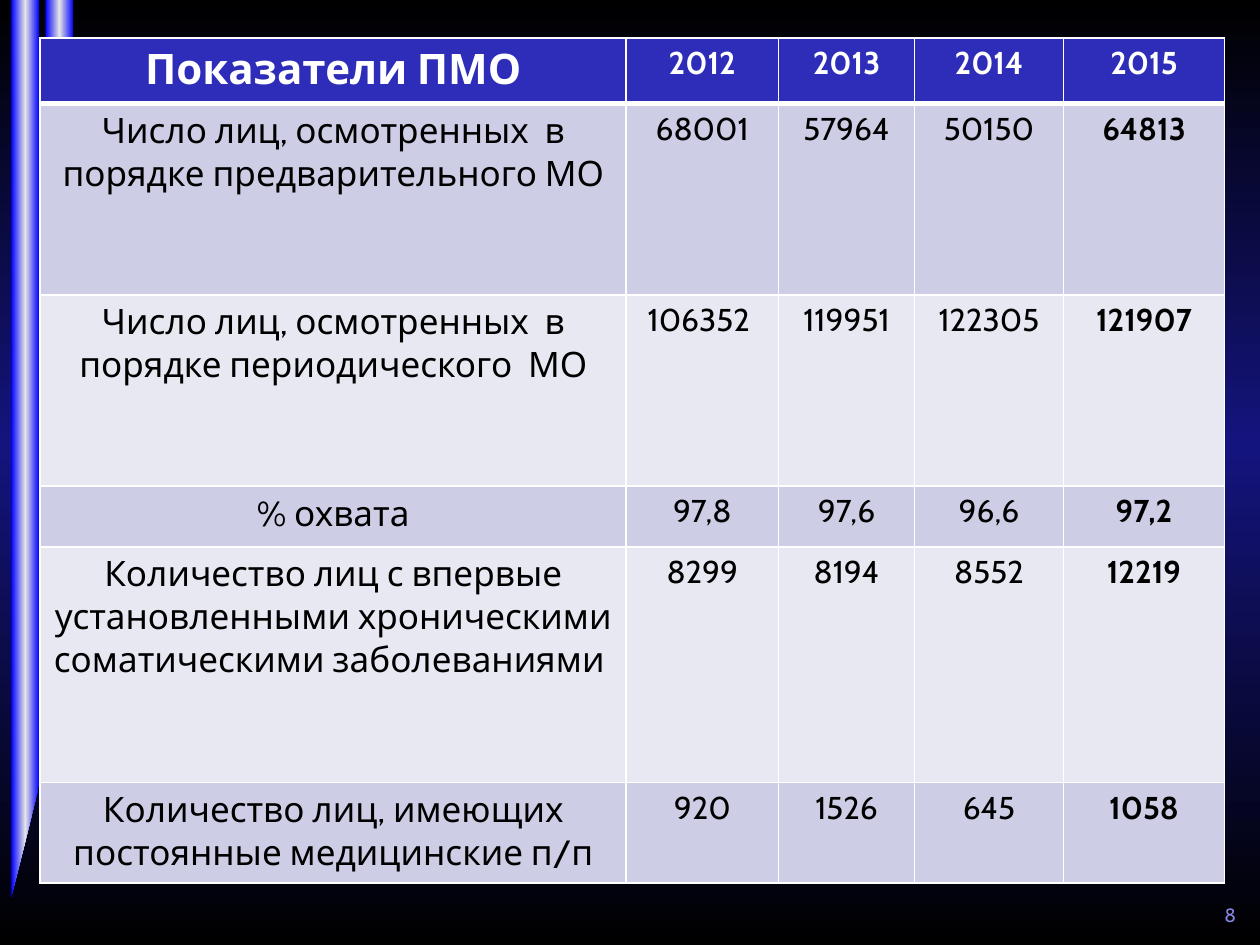
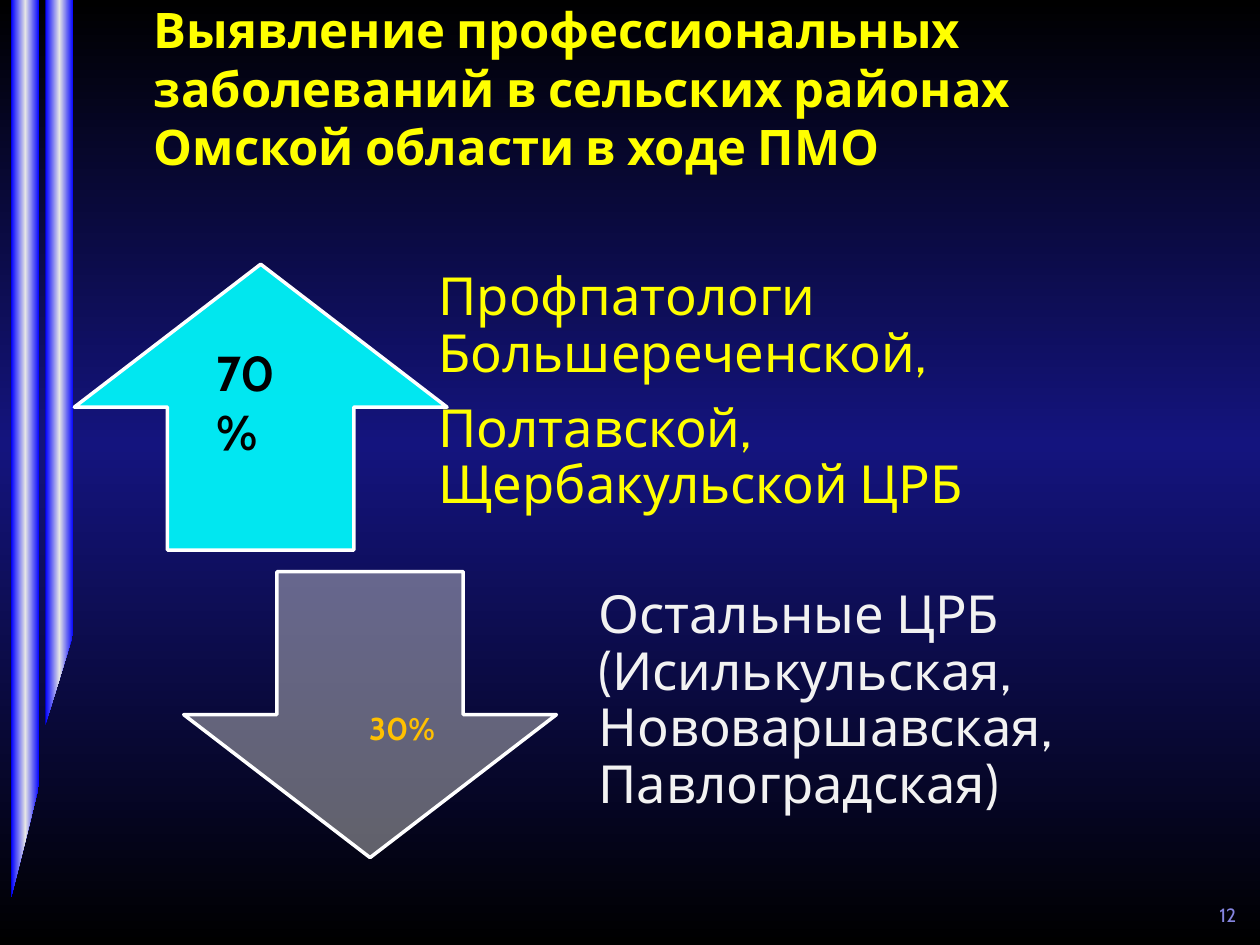
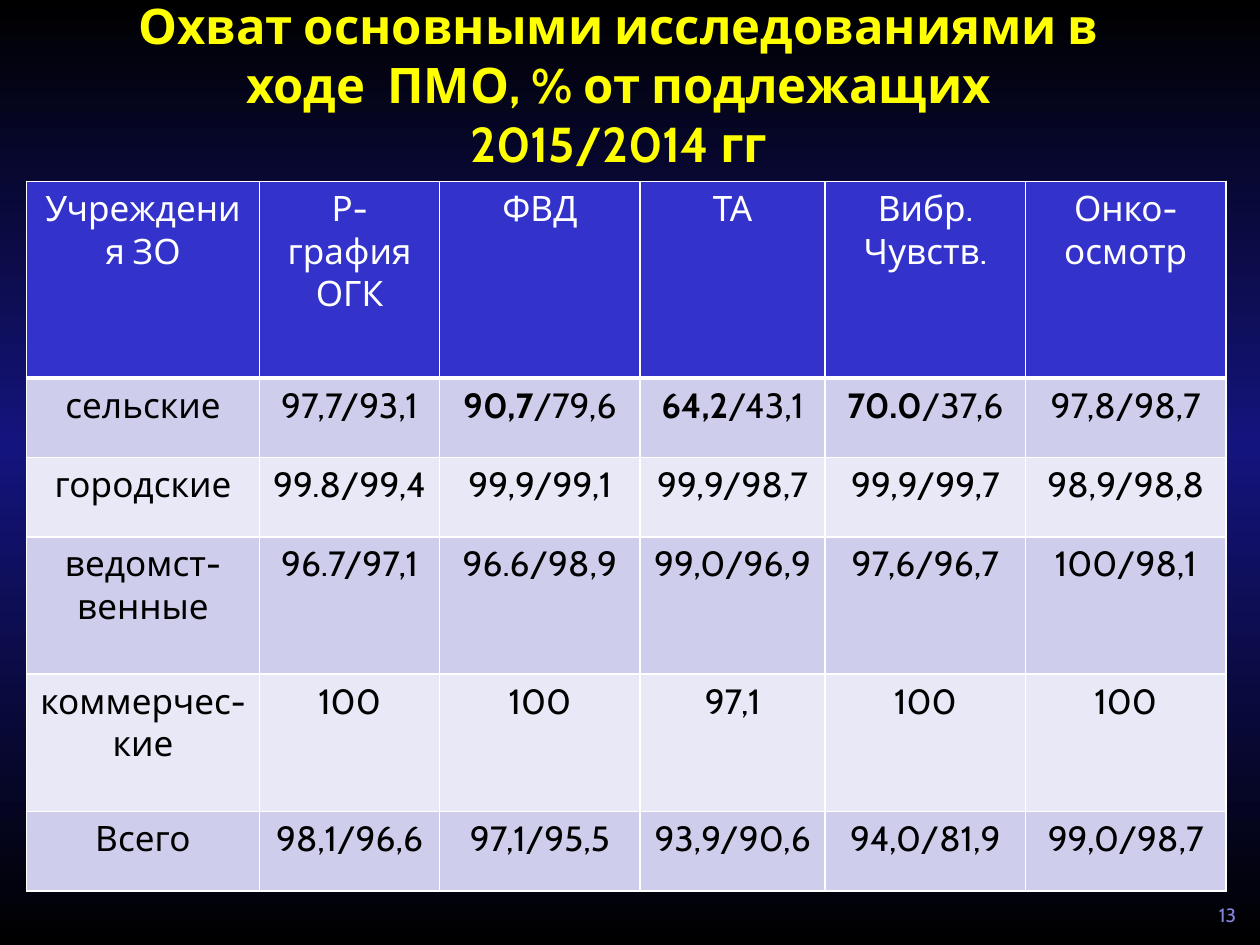
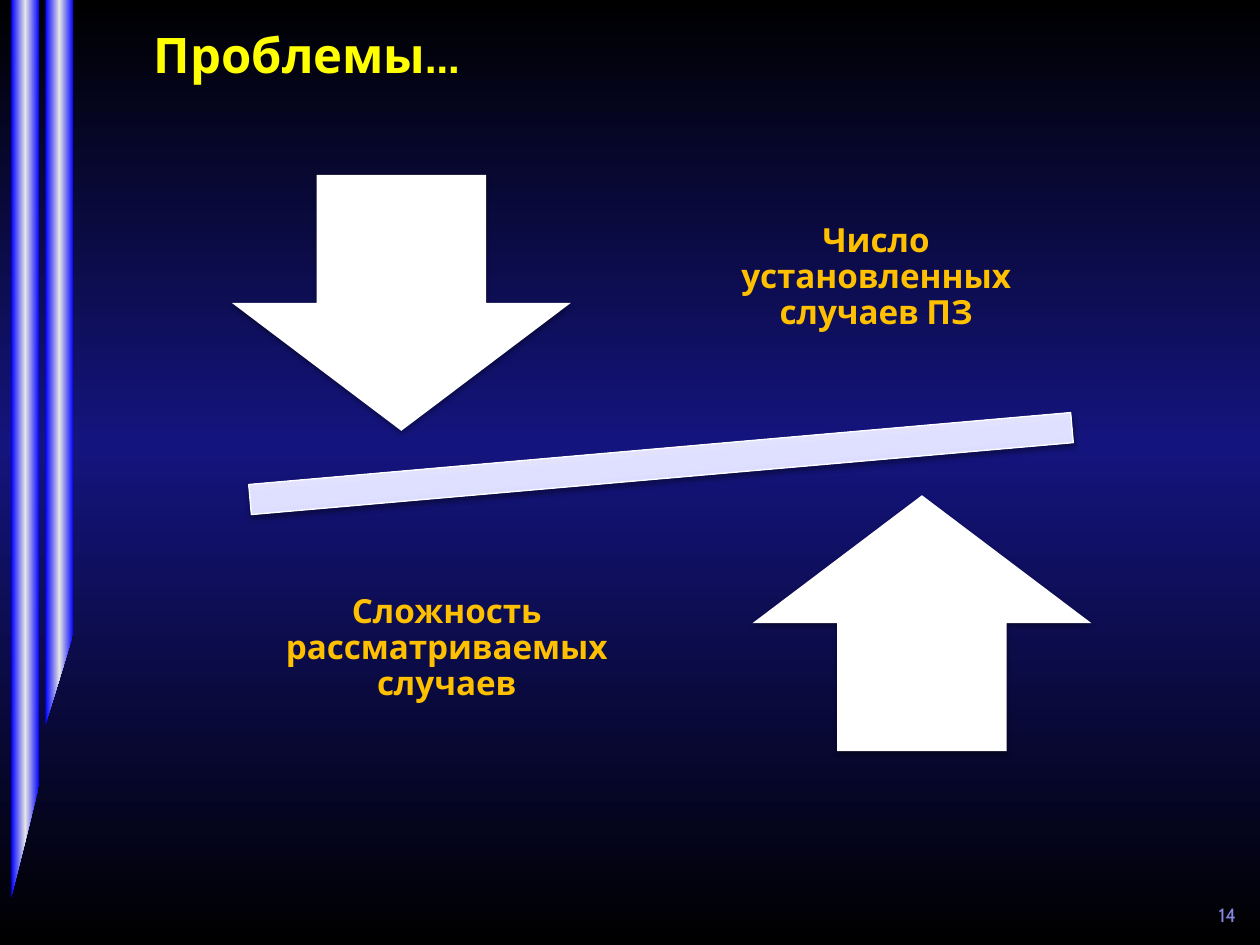
import pptx
import pptx.dml.color
import pptx.enum.shapes
import pptx.enum.text
import pptx.oxml
import pptx.oxml.ns
import pptx.util
from lxml import etree

Pt = pptx.util.Pt
qn = pptx.oxml.ns.qn
ALIGN = pptx.enum.text.PP_ALIGN
ANCHOR = pptx.enum.text.MSO_ANCHOR
AUTO_SIZE = pptx.enum.text.MSO_AUTO_SIZE
PRESET = pptx.enum.shapes.MSO_SHAPE

FONT = "Cabin"
WHITE = "FFFFFF"
BLACK = "000000"
YELLOW = "FFFF00"
AMBER = "FFC000"
BACKGROUND_STOPS = [(0, BLACK), (53, "14147E"), (100, BLACK)]
STRIPE_STOPS = [(0, "0000FF"), (50, "E5E5E5"), (100, "0000FF")]
BAR_STOPS = [(0, "CECEFF"), (35, "DBDBFF"), (100, "F1F1FF")]
STRIPE_WIDTH = 16
STRIPES = [(26, 362, 414), (6.5, 448.5, 512.5)]  # left, right end, tip

EXAM_ROWS = [
    ["*Показатели ПМО*", "*2012*", "*2013*", "*2014*", "*2015*"],
    ["Число лиц, осмотренных  в порядке предварительного МО",
     "68001", "57964", "50150", "*64813*"],
    ["Число лиц, осмотренных  в порядке периодического  МО",
     "106352 ", "119951", "122305", "*121907*"],
    ["% охвата", "97,8", "97,6", "96,6", "*97,2*"],
    ["Количество лиц с впервые установленными хроническими "
     "соматическими заболеваниями ", "8299", "8194", "8552", "*12219*"],
    ["Количество лиц, имеющих постоянные медицинские п/п",
     "920", "1526", "645", "*1058*"],
]
COVERAGE_ROWS = [
    ["Учреждения ЗО", "Р-графия ОГК", "ФВД", "ТА", "Вибр.\nЧувств.", "Онко-\nосмотр"],
    ["сельские", "97,7/93,1", "*90,7*/79,6", "*64,2*/43,1", "*70.0*/37,6", "97,8/98,7"],
    ["городские", "99.8/99,4", "99,9/99,1", "99,9/98,7", "99,9/99,7", "98,9/98,8"],
    ["ведомст-венные", "96.7/97,1", "96.6/98,9", "99,0/96,9", "97,6/96,7", "100/98,1"],
    ["коммерчес-кие", "100", "100", "97,1", "100", "100"],
    ["Всего", "98,1/96,6", "97,1/95,5", "93,9/90,6", "94,0/81,9", "99,0/98,7"],
]


def color(hex_value):
    return pptx.dml.color.RGBColor.from_string(hex_value)


def points(values):
    return [Pt(value) for value in values]


def apply_format(target, values):
    for name, value in values.items():
        setattr(target, name, value)


def set_gradient(fill, element, stops, angle):
    """Give the fill, which lies in element, any number of (percent, colour) stops."""
    fill.gradient()
    fill.gradient_angle = angle
    stop_list = element.find(".//" + qn("a:gsLst"))
    for stop in list(stop_list):
        stop_list.remove(stop)
    for percent, hex_value in stops:
        stop = etree.SubElement(stop_list, qn("a:gs"), pos=str(percent * 1000))
        etree.SubElement(stop, qn("a:srgbClr"), val=hex_value)


def write_text(frame, text, size, hex_value, align=ALIGN.LEFT, bold=False, **spacing):
    """Write one paragraph per line; parts between asterisks are bold."""
    for index, line in enumerate(text.split("\n")):
        paragraph = frame.add_paragraph() if index else frame.paragraphs[0]
        apply_format(paragraph, {"alignment": align, **spacing})
        for part_index, part in enumerate(line.split("*")):
            if part:
                run = paragraph.add_run()
                run.text = part
                apply_format(run.font, {"name": FONT, "size": Pt(size),
                                        "bold": bold or part_index % 2 == 1})
                run.font.color.rgb = color(hex_value)


def add_text(slide, box, text, size, hex_value, frame_format=None, insets=None, **style):
    """Insets are left, top, right, bottom."""
    frame = slide.shapes.add_textbox(*points(box)).text_frame
    apply_format(frame, {"word_wrap": True, **(frame_format or {})})
    if insets:
        names = ("margin_left", "margin_top", "margin_right", "margin_bottom")
        apply_format(frame, dict(zip(names, points(insets))))
    write_text(frame, text, size, hex_value, **style)


def add_title(slide, box, text, align=ALIGN.LEFT):
    add_text(slide, box, text, 28, YELLOW, {"vertical_anchor": ANCHOR.MIDDLE},
             (0, 0, 0, 0), align=align, bold=True)


def add_label(slide, box, text, size, hex_value, insets, **style):
    """Tightly set, vertically centred text beside an arrow."""
    add_text(slide, box, text, size, hex_value, {"vertical_anchor": ANCHOR.MIDDLE}, insets,
             line_spacing=0.9, space_after=Pt(size * 0.35), **style)


def add_slide(presentation, number, striped=True):
    slide = presentation.slides.add_slide(presentation.slide_layouts[6])
    set_gradient(slide.background.fill, slide.element, BACKGROUND_STOPS, 90)
    if striped:
        for left, right_end, tip in STRIPES:
            add_stripe(slide, left, right_end, tip)
    add_text(slide, (497.5, 504, 216, 28.8), str(number), 11, "8585E0",
             {"vertical_anchor": ANCHOR.BOTTOM}, align=ALIGN.RIGHT)
    return slide


def add_stripe(slide, left, right_end, tip):
    right = left + STRIPE_WIDTH
    builder = slide.shapes.build_freeform(Pt(left), 0)
    builder.add_line_segments([(Pt(right), 0), (Pt(right), Pt(right_end)),
                               (Pt(left), Pt(tip))], close=True)
    stripe = builder.convert_to_shape()
    stripe.shadow.inherit = False
    stripe.line.fill.background()
    set_gradient(stripe.fill, stripe.element, STRIPE_STOPS, 0)


def add_preset(slide, preset, box, fill=None, opacity=None, line_width=None):
    shape = slide.shapes.add_shape(preset, *points(box))
    shape.shadow.inherit = False
    if fill:
        shape.fill.solid()
        shape.fill.fore_color.rgb = color(fill)
    if opacity:
        fill_color = shape.element.spPr.find(".//" + qn("a:srgbClr"))
        etree.SubElement(fill_color, qn("a:alpha"), val=str(opacity * 1000))
    if line_width:
        shape.line.color.rgb = color(WHITE)
        shape.line.width = Pt(line_width)
    else:
        shape.line.fill.background()
    return shape


def add_shadow(shape):
    effects = shape.element.spPr.find(qn("a:effectLst"))
    shadow = etree.SubElement(effects, qn("a:outerShdw"), blurRad=str(Pt(3.1)),
                              dist=str(Pt(1.6)), dir="5400000", rotWithShape="0")
    shadow_color = etree.SubElement(shadow, qn("a:srgbClr"), val=BLACK)
    etree.SubElement(shadow_color, qn("a:alpha"), val="38000")


def set_borders(cell, widths):
    properties = cell._tc.get_or_add_tcPr()
    for side, width in widths.items():
        line = etree.SubElement(properties, qn("a:ln" + side), w=str(Pt(width)))
        fill = etree.SubElement(line, qn("a:solidFill"))
        etree.SubElement(fill, qn("a:srgbClr"), val=WHITE)


def add_table(slide, left, top, widths, heights, rows, fills, header_sizes, body_sizes):
    """Fills are header, odd and even rows; sizes are first column and the others."""
    box = points((left, top, sum(widths), sum(heights)))
    table = slide.shapes.add_table(len(rows), len(widths), *box).table
    for column, width in zip(table.columns, widths):
        column.width = Pt(width)
    for row_index, (row, height) in enumerate(zip(rows, heights)):
        table.rows[row_index].height = Pt(height)
        header = row_index == 0
        fill = fills[0] if header else fills[2 - row_index % 2]
        sizes = header_sizes if header else body_sizes
        borders = {"L": 1, "R": 1, "T": 1, "B": 3} if header else {"L": 1, "R": 1, "B": 1}
        for column_index, text in enumerate(row):
            cell = table.cell(row_index, column_index)
            set_borders(cell, borders)
            cell.fill.solid()
            cell.fill.fore_color.rgb = color(fill)
            write_text(cell.text_frame, text, sizes[min(column_index, 1)],
                       WHITE if header else BLACK, ALIGN.CENTER)


def build_exam_counts(presentation):
    slide = add_slide(presentation, 8)
    add_table(slide, 23, 21.6, [334.8, 87.1, 77.8, 85, 92.2],
              [37.5, 109.4, 109.4, 34.6, 134.6, 57.6], EXAM_ROWS,
              ("2D2DB9", "CDCDE6", "E8E8F3"), (24, 18), (20, 18))


def build_detection(presentation):
    slide = add_slide(presentation, 12)
    add_title(slide, (88, 31, 544.3, 38),
              "Выявление профессиональных заболеваний в сельских районах "
              "Омской области в ходе ПМО")
    insets = (16.5, 0, 16.5, 16.5)
    add_preset(slide, PRESET.UP_ARROW, (42.5, 151, 213, 163.4), "00FFFF", 90, 2)
    add_label(slide, (234, 151, 417, 163.4),
              "Профпатологи Большереченской,\nПолтавской, Щербакульской ЦРБ",
              30, YELLOW, insets)
    add_preset(slide, PRESET.DOWN_ARROW, (105, 326.7, 213, 163.4), "BFBFBF", 50, 2)
    add_label(slide, (325.5, 327.5, 361.5, 163.4),
              "Остальные ЦРБ (Исилькульская, Нововаршавская, Павлоградская)",
              30, "F2F2F2", insets)
    grow = {"auto_size": AUTO_SIZE.SHAPE_TO_FIT_TEXT}
    add_text(slide, (116.6, 192.2, 52.6, 75), "70%", 28, BLACK, grow, bold=True)
    add_text(slide, (203.8, 401.8, 65.5, 29), "30%", 18, AMBER,
             {**grow, "word_wrap": False}, bold=True)


def build_coverage(presentation):
    slide = add_slide(presentation, 13, striped=False)
    add_title(slide, (76.3, 28.8, 554.4, 38),
              "Охват основными исследованиями в ходе  ПМО, % от подлежащих 2015/2014 гг",
              ALIGN.CENTER)
    add_table(slide, 15.1, 103.7, [133.2, 103, 114.5, 105.8, 114.5, 114.5],
              [112.3, 45.4, 45.4, 78.5, 78.5, 45.4], COVERAGE_ROWS,
              ("3333CC", "CECEEC", "E8E8F6"), (20, 20), (20, 20))


def build_problems(presentation):
    slide = add_slide(presentation, 14)
    add_title(slide, (88, 11.5, 544.3, 38), "Проблемы…")
    bar = add_preset(slide, PRESET.MATH_MINUS, (57, 228.2, 641.5, 73.4), line_width=0.75)
    set_gradient(bar.fill, bar.element, BAR_STOPS, 90)
    bar.rotation = 355
    add_shadow(bar)
    sides = [
        (PRESET.DOWN_ARROW, (132.5, 100), (397.4, 82), "Число установленных случаев ПЗ"),
        (PRESET.UP_ARROW, (430, 283), (152, 293.8), "Сложность рассматриваемых случаев"),
    ]
    for preset, arrow_corner, label_corner, text in sides:
        add_shadow(add_preset(slide, preset, (*arrow_corner, 193.7, 146.2), WHITE))
        add_label(slide, (*label_corner, 206.6, 153.4), text, 19, AMBER,
                  (10.8, 10.8, 10.8, 10.8), align=ALIGN.CENTER, bold=True)


def main():
    presentation = pptx.Presentation()
    apply_format(presentation, {"slide_width": Pt(720), "slide_height": Pt(540)})
    build_exam_counts(presentation)
    build_detection(presentation)
    build_coverage(presentation)
    build_problems(presentation)
    presentation.save("out.pptx")


if __name__ == "__main__":
    main()
